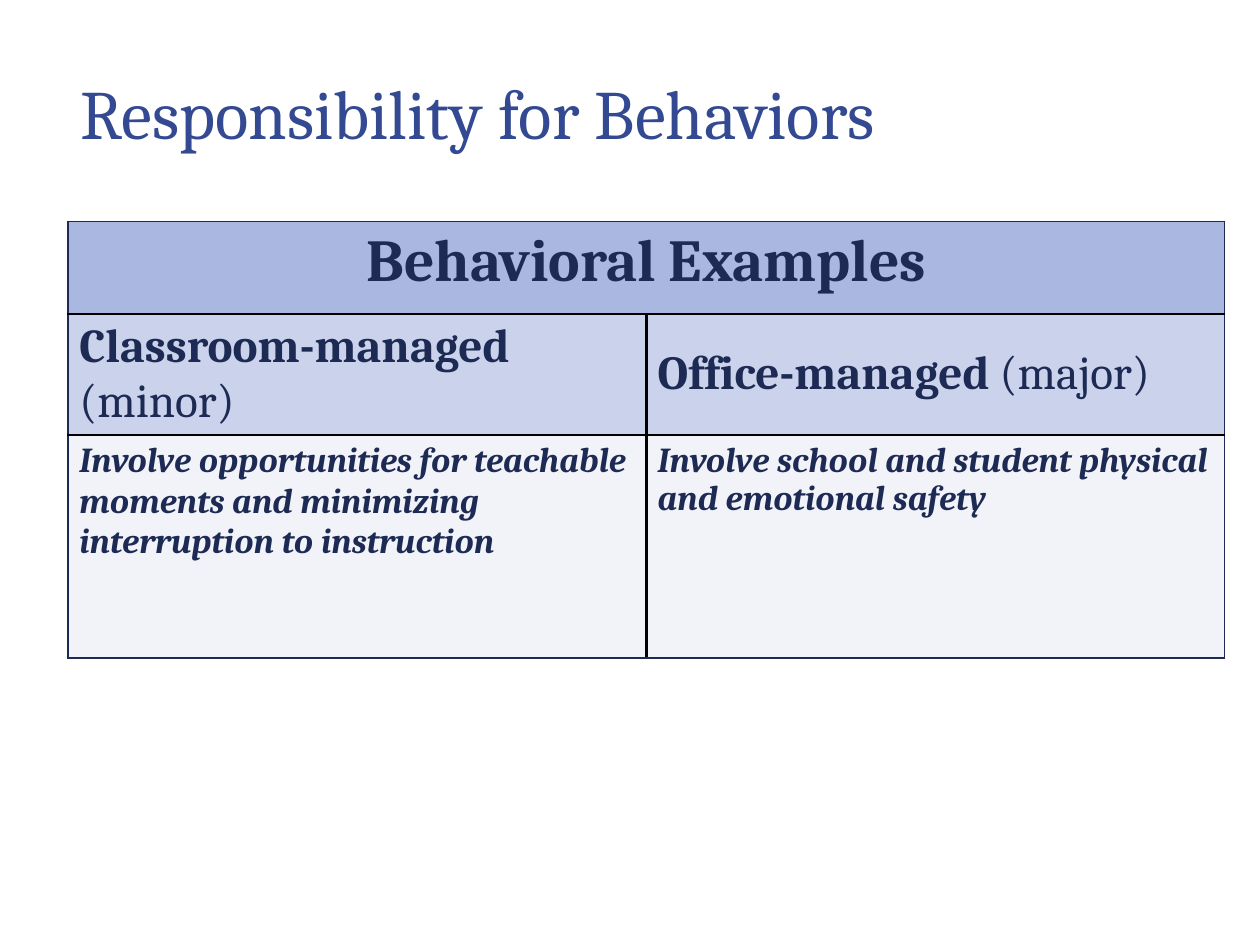
from dataclasses import dataclass

from lxml import etree
from pptx import Presentation
from pptx.dml.color import RGBColor
from pptx.enum import text
from pptx.oxml import ns
from pptx.util import Inches, Pt


@dataclass(frozen=True)
class Theme:
    font: str = "Cambria"
    blue: str = "334991"
    navy: str = "1D2A53"
    black: str = "000000"
    fills: tuple = ("AAB7E1", "CBD3EC", "F1F3F9")
    title: float = 39.6
    sizes: tuple = (34, 27, 20)
    outer: float = 1
    inner: float = 1.5


THEME = Theme()
ROWS = (0.73, 0.6, 1.77)
COLS = (4.59, 4.59)


def add_run(para, words, size, color, bold=False, slant=False):
    run = para.add_run()
    run.text = words
    font = run.font
    font.name, font.size = THEME.font, Pt(size)
    font.bold, font.italic = bold, slant
    font.color.rgb = RGBColor.from_string(color)


def add_title(slide, words):
    box = slide.shapes.add_textbox(Inches(0.54), Inches(0.5), Inches(6.65), Inches(0.78))
    frame = box.text_frame
    frame.word_wrap = True
    frame.vertical_anchor = text.MSO_ANCHOR.MIDDLE
    add_run(frame.paragraphs[0], words, THEME.title, THEME.blue)


def set_edges(cell, outer):
    """Draw thin navy lines on the outer sides and black lines inside."""
    props = cell._tc.get_or_add_tcPr()
    for place, side in enumerate("LRTB"):
        out = side in outer
        width = THEME.outer if out else THEME.inner
        line = etree.Element(ns.qn(f"a:ln{side}"), w=str(Pt(width)))
        fill = etree.SubElement(line, ns.qn("a:solidFill"))
        etree.SubElement(fill, ns.qn("a:srgbClr"), val=THEME.navy if out else THEME.black)
        props.insert(place, line)


def fill_cell(cell, row, runs):
    """Write (words, bold, italic) runs in the style of the row."""
    cell.fill.solid()
    cell.fill.fore_color.rgb = RGBColor.from_string(THEME.fills[row])
    cell.margin_left = cell.margin_right = Inches(0.09)
    cell.margin_top = cell.margin_bottom = Inches(0.05)
    for words, bold, slant in runs:
        add_run(cell.text_frame.paragraphs[0], words, THEME.sizes[row],
                THEME.navy, bold, slant)


def add_grid(slide, rows):
    frame = slide.shapes.add_table(len(ROWS), len(COLS), Inches(0.54), Inches(1.76),
                                   Inches(sum(COLS)), Inches(sum(ROWS)))
    table = frame.table
    for col, width in zip(table.columns, COLS):
        col.width = Inches(width)
    for row, height in zip(table.rows, ROWS):
        row.height = Inches(height)
    table.cell(0, 0).merge(table.cell(0, 1))

    for r, cells in enumerate(rows):
        for c, runs in enumerate(cells):
            cell = table.cell(r, c)
            fill_cell(cell, r, runs)
            outer = "LR" if r == 0 else "LR"[c]
            outer += {0: "T", len(rows) - 1: "B"}.get(r, "")
            set_edges(cell, outer)
    return table


def main():
    deck = Presentation()
    deck.slide_width, deck.slide_height = Inches(10), Inches(7.5)
    slide = deck.slides.add_slide(deck.slide_layouts[6])

    # Table of behaviors
    table = add_grid(slide, [
        [[("Behavioral Examples", True, False)], []],
        [[("Classroom-managed ", True, False), ("(minor)", False, False)],
         [("Office-managed ", True, False), ("(major)", False, False)]],
        [[("Involve opportunities for teachable moments and minimizing "
           "interruption to instruction", True, True)],
         [("Involve school and student physical and emotional safety", True, True)]],
    ])

    # Alignment of single cells
    table.cell(0, 0).text_frame.paragraphs[0].alignment = text.PP_ALIGN.CENTER
    for c in range(len(COLS)):
        table.cell(1, c).vertical_anchor = text.MSO_ANCHOR.MIDDLE
    table.cell(2, 1).text_frame.paragraphs[0].line_spacing = 0.95

    # Heading
    add_title(slide, "Responsibility for Behaviors")
    deck.save("out.pptx")


if __name__ == "__main__":
    main()
